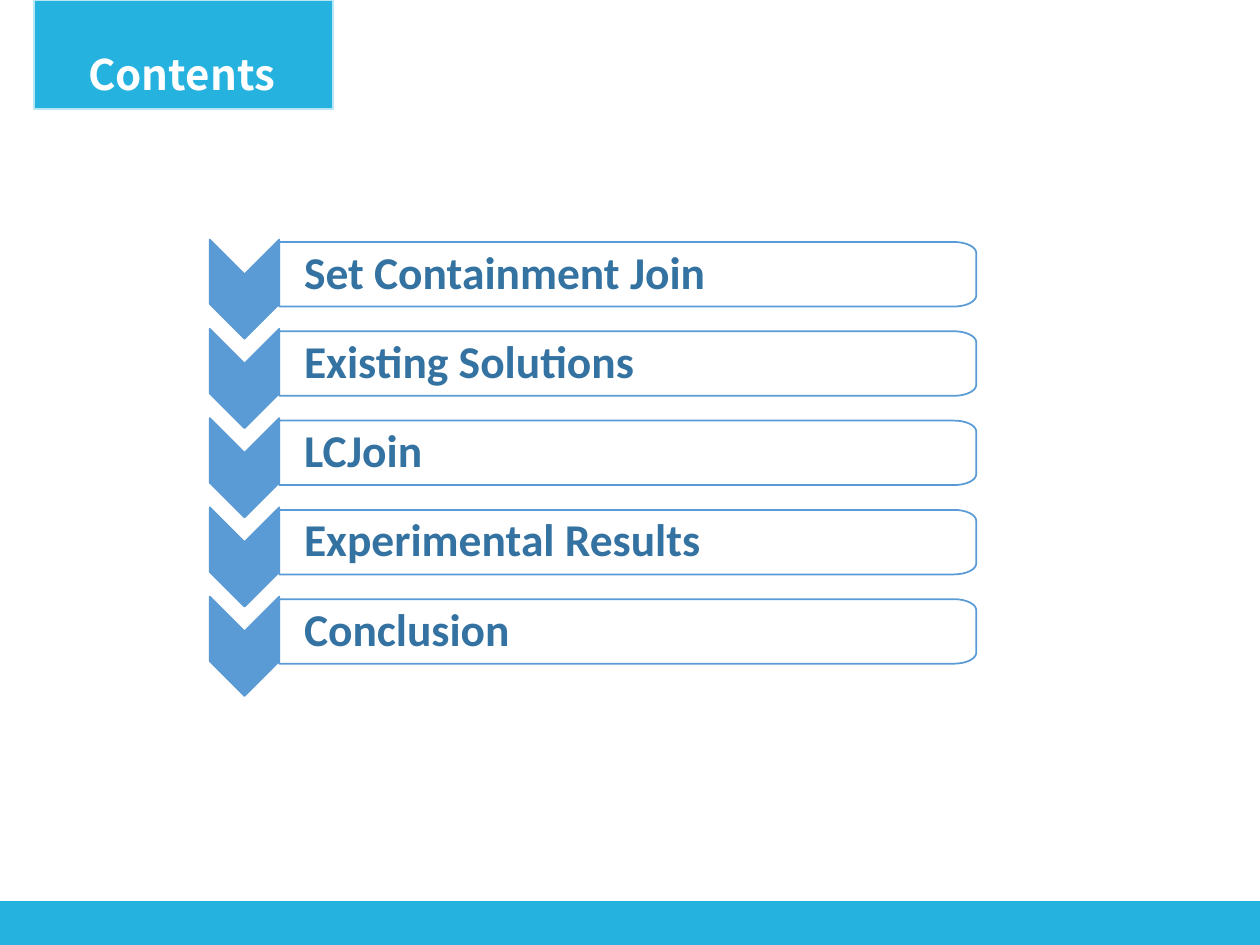
"""Build a contents slide with a column of chevron-led topics."""
from dataclasses import dataclass
from math import cos, pi, sin

from lxml.etree import SubElement
from pptx import Presentation
from pptx.dml.color import RGBColor
from pptx.enum.shapes import MSO_SHAPE
from pptx.enum.text import MSO_ANCHOR, MSO_AUTO_SIZE, PP_ALIGN
from pptx.oxml.ns import qn
from pptx.util import Cm, Pt

TITLE = "Contents"
TOPICS = [
    "Set Containment Join",
    "Existing Solutions",
    "LCJoin",
    "Experimental Results",
    "Conclusion",
]


@dataclass(frozen=True)
class Theme:
    band: str = "26B2DE"
    edge: str = "B7E6F4"
    blue: str = "5B9BD5"
    ink: str = "3472A1"
    white: str = "FFFFFF"
    head: str = "Noto Sans CJK SC"
    body: str = "Calibri"
    big: int = 24
    item: int = 26


LOOK = Theme()
LEFT, TOP, PITCH = 4.23, 4.83, 1.8
WIDE, SIDE, NOTCH = 1.4, 1.3, 0.7
LONG, DROP = 14.05, 0.05
ROUND_X, ROUND_Y, STEPS = 0.45, 0.22, 12


def paint(shape, fill, line):
    shape.shadow.inherit = False
    shape.fill.solid()
    shape.fill.fore_color.rgb = RGBColor.from_string(fill)
    shape.line.color.rgb = RGBColor.from_string(line)
    shape.line.width = Pt(1)


def write(para, text, face, size, color):
    run = para.add_run()
    run.text = text
    font = run.font
    font.name, font.size, font.bold = face, Pt(size), True
    font.color.rgb = RGBColor.from_string(color)


def block(slide, x, y, w, h, line):
    shape = slide.shapes.add_shape(
        MSO_SHAPE.RECTANGLE, Cm(x), Cm(y), Cm(w), Cm(h))
    paint(shape, LOOK.band, line)


def outline(slide, points, fill):
    spots = [(Cm(x), Cm(y)) for x, y in points]
    pen = slide.shapes.build_freeform(*spots[0])
    pen.add_line_segments(spots[1:], close=True)
    shape = pen.convert_to_shape()
    paint(shape, fill, LOOK.blue)
    return shape


def arrow(slide, y):
    mid, right, low = LEFT + WIDE / 2, LEFT + WIDE, y + SIDE
    outline(slide, [(right, y), (right, low), (mid, low + NOTCH),
                    (LEFT, low), (LEFT, y), (mid, y + NOTCH)], LOOK.blue)


def panel(slide, y, text):
    x, low = LEFT + WIDE, y + SIDE
    turns = [pi / 2 * n / STEPS for n in range(STEPS + 1)]
    bend = x + LONG - ROUND_X
    upper = [(bend + ROUND_X * sin(t), y + ROUND_Y * (1 - cos(t)))
             for t in turns]
    lower = [(px, y + low - py) for px, py in reversed(upper)]
    shape = outline(slide, [(x, y), *upper, *lower, (x, low)], LOOK.white)
    tint = shape.fill._xPr.find(f"{qn('a:solidFill')}/{qn('a:srgbClr')}")
    SubElement(tint, qn("a:alpha"), val="90000")
    frame = shape.text_frame
    frame.word_wrap = True
    frame.vertical_anchor = MSO_ANCHOR.MIDDLE
    frame.margin_left = Cm(0.5)
    frame.margin_top = frame.margin_right = frame.margin_bottom = Cm(0.18)
    para = frame.paragraphs[0]
    para.alignment = PP_ALIGN.LEFT
    para.line_spacing = 0.9
    write(para, text, LOOK.body, LOOK.item, LOOK.ink)


def title(slide):
    box = slide.shapes.add_textbox(Cm(0.61), Cm(0.86), Cm(6.1), Cm(1.3))
    frame = box.text_frame
    frame.word_wrap = True
    frame.auto_size = MSO_AUTO_SIZE.SHAPE_TO_FIT_TEXT
    para = frame.paragraphs[0]
    para.alignment = PP_ALIGN.CENTER
    write(para, TITLE, LOOK.head, LOOK.big, LOOK.white)


def main():
    deck = Presentation()
    deck.slide_width, deck.slide_height = Cm(25.4), Cm(19.05)
    slide = deck.slides.add_slide(deck.slide_layouts[6])
    block(slide, 0, 18.19, 25.4, 0.86, LOOK.band)
    block(slide, 0.69, 0, 6.02, 2.2, LOOK.edge)
    title(slide)
    for row, text in enumerate(TOPICS):
        y = TOP + row * PITCH
        arrow(slide, y)
        panel(slide, y + DROP, text)
    deck.save("out.pptx")


if __name__ == "__main__":
    main()
